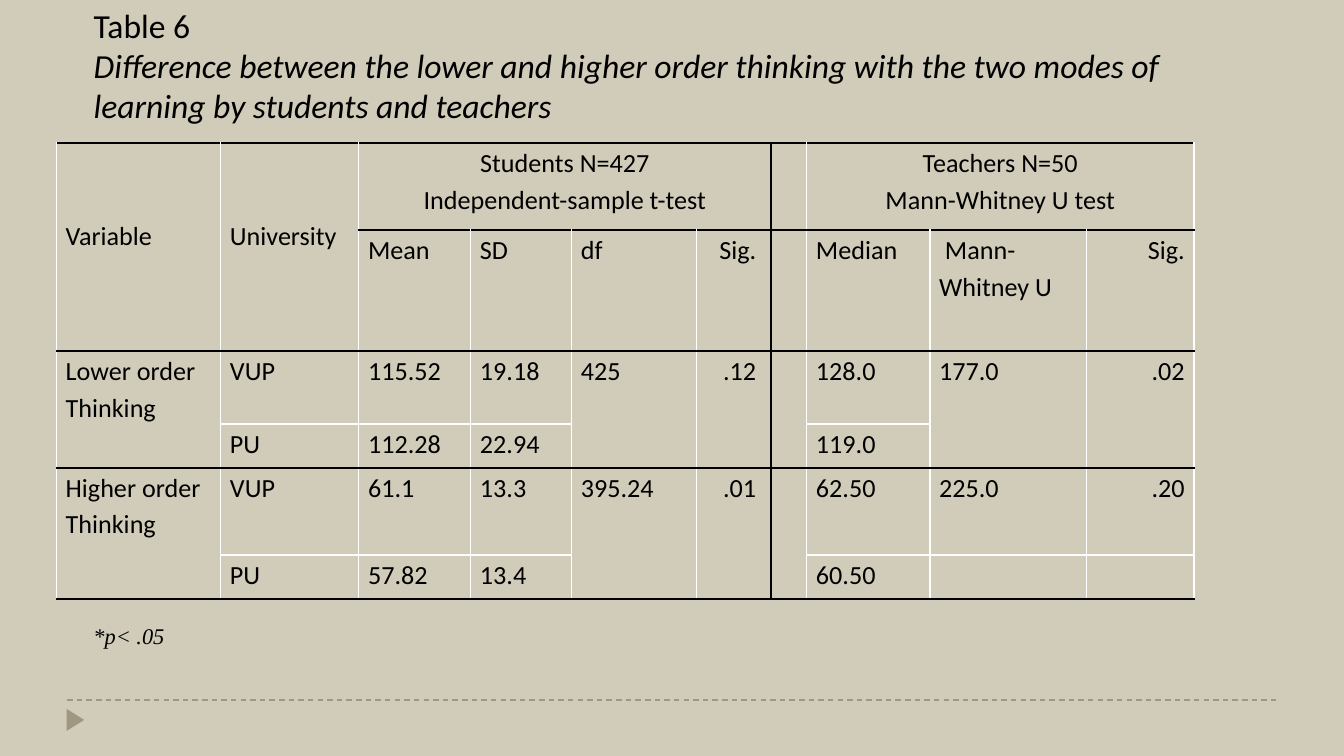
from lxml.etree import SubElement
from pptx import Presentation
from pptx.dml.color import RGBColor
from pptx.enum.dml import MSO_LINE_DASH_STYLE as Dash
from pptx.enum.shapes import MSO_CONNECTOR as Connector, MSO_SHAPE as Shape
from pptx.enum.text import MSO_ANCHOR as Anchor, MSO_AUTO_SIZE as AutoSize, PP_ALIGN as Align
from pptx.oxml.ns import qn
from pptx.util import Pt

COLORS = {"background": "D0CCB9", "accent": "A09781", "ink": "000000"}
BODY_FONT, NOTE_FONT = "Calibri", "Times New Roman"

# Content
TITLE = [
    ("Table 6", False),
    ("Difference between the lower and higher order thinking with the two modes of "
     "learning by students and teachers", True),
]
NOTE = "*p< .05"
ROWS = [
    ["Variable", "University", "Students N=427\nIndependent-sample t-test", "", "", "", "",
     "Teachers N=50\nMann-Whitney U test", "", ""],
    ["", "", "Mean", "SD", "df", "Sig.", "", "Median", " Mann-Whitney U", "Sig."],
    ["Lower order Thinking", "VUP", "115.52", "19.18", "425", ".12", "", "128.0", "177.0", ".02"],
    ["", "PU", "112.28", "22.94", "", "", "", "119.0", "", ""],
    ["Higher order Thinking", "VUP", "61.1", "13.3", "395.24", ".01", "", "62.50", "225.0", ".20"],
    ["", "PU", "57.82", "13.4", "", "", "", "60.50", "", ""],
]

# Table layout, in points
COL_WIDTHS = [88, 74, 60, 54, 67, 40, 19, 66, 84, 57.6]
ROW_HEIGHTS = [46.8, 64.8, 38.9, 23.6, 46.8, 23.6]
MERGES = [(0, 0, 1, 0), (0, 1, 1, 1), (0, 2, 0, 5), (0, 7, 0, 9)]
MERGES += [(top, col, top + 1, col) for top in (2, 4) for col in (0, 4, 5, 6)]
MERGES += [(2, col, 3, col) for col in (8, 9)]
RULES = {0: 0, 1: 2, 2: 0, 4: 0, 6: 0}  # row boundary: first column of its rule
DIVIDER = 6  # column boundary between students and teachers
SIG_COLS = (5, 9)
HEADING_DROP = 39  # lowers Variable and University in their merged cells


def rgb(name):
    return RGBColor.from_string(COLORS[name])


def add_run(paragraph, text, font, size, italic=False):
    run = paragraph.add_run()
    run.text = text
    run.font.name, run.font.size, run.font.italic = font, Pt(size), italic
    run.font.color.rgb = rgb("ink")


def draw_borders(cell, sides):
    props = cell._tc.get_or_add_tcPr()
    for side in sides:
        border = SubElement(props, qn(f"a:ln{side}"), w=str(Pt(1)))
        fill = SubElement(border, qn("a:solidFill"))
        SubElement(fill, qn("a:srgbClr"), val=COLORS["ink"])


prs = Presentation()
prs.slide_width, prs.slide_height = Pt(720), Pt(405)
slide = prs.slides.add_slide(prs.slide_layouts[5])
slide.background.fill.solid()
slide.background.fill.fore_color.rgb = rgb("background")

# Footer rule and marker
footer_rule = slide.shapes.add_connector(Connector.STRAIGHT, Pt(36), Pt(375), Pt(684), Pt(375))
footer_rule.line.color.rgb = rgb("accent")
footer_rule.line.width = Pt(0.75)
footer_rule.line.dash_style = Dash.DASH
SubElement(footer_rule._element.spPr, qn("a:effectLst"))

marker = slide.shapes.add_shape(Shape.ISOSCELES_TRIANGLE, Pt(34.5), Pt(381), Pt(11.8), Pt(9.4))
marker.rotation = 90
marker.shadow.inherit = False
marker.fill.solid()
marker.fill.fore_color.rgb = rgb("accent")
marker.line.fill.background()

# Results table
frame = slide.shapes.add_table(len(ROWS), len(COL_WIDTHS), Pt(30.2), Pt(76.5),
                               Pt(sum(COL_WIDTHS)), Pt(sum(ROW_HEIGHTS)))
results = frame.table
results.first_row = results.horz_banding = False
for column, width in zip(results.columns, COL_WIDTHS):
    column.width = Pt(width)
for row, height in zip(results.rows, ROW_HEIGHTS):
    row.height = Pt(height)
for top, left, bottom, right in MERGES:
    results.cell(top, left).merge(results.cell(bottom, right))

for r, row in enumerate(ROWS):
    for c, text in enumerate(row):
        cell = results.cell(r, c)
        cell.margin_left = cell.margin_right = Pt(5)
        cell.margin_top = cell.margin_bottom = 0
        if r == 0 and c < 2:
            cell.margin_top = Pt(HEADING_DROP)
        if c == SIG_COLS[0] and r > 0:
            cell.margin_right = Pt(8)

        # Each edge on a rule or on the divider gets a line
        below = r + (cell.span_height if cell.is_merge_origin else 1)
        beyond = c + (cell.span_width if cell.is_merge_origin else 1)
        edges = {"L": c == DIVIDER, "R": beyond == DIVIDER,
                 "T": r in RULES and c >= RULES[r],
                 "B": below in RULES and c >= RULES[below]}
        draw_borders(cell, [side for side, ruled in edges.items() if ruled])
        cell.fill.background()

        for i, line in enumerate(text.split("\n") if text else []):
            paragraph = cell.text_frame.paragraphs[0] if i == 0 else cell.text_frame.add_paragraph()
            paragraph.line_spacing = 1.15
            if r == 0 and c >= 2:
                paragraph.alignment = Align.CENTER
            elif c in SIG_COLS:
                paragraph.alignment = Align.RIGHT
            add_run(paragraph, line, BODY_FONT, 14)

# Title
title = slide.shapes.title
title.left, title.top, title.width, title.height = Pt(43), Pt(-1.4), Pt(636), Pt(72.7)
heading = title.text_frame
heading.word_wrap = True
heading.auto_size = AutoSize.NONE
heading.vertical_anchor = Anchor.MIDDLE
for i, (text, italic) in enumerate(TITLE):
    paragraph = heading.paragraphs[0] if i == 0 else heading.add_paragraph()
    paragraph.alignment = Align.LEFT
    add_run(paragraph, text, BODY_FONT, 18, italic)

# Significance note
note = slide.shapes.add_textbox(Pt(43), Pt(330), Pt(53), Pt(21.8)).text_frame
note.word_wrap = False
add_run(note.paragraphs[0], NOTE, NOTE_FONT, 12, True)

prs.save("out.pptx")
